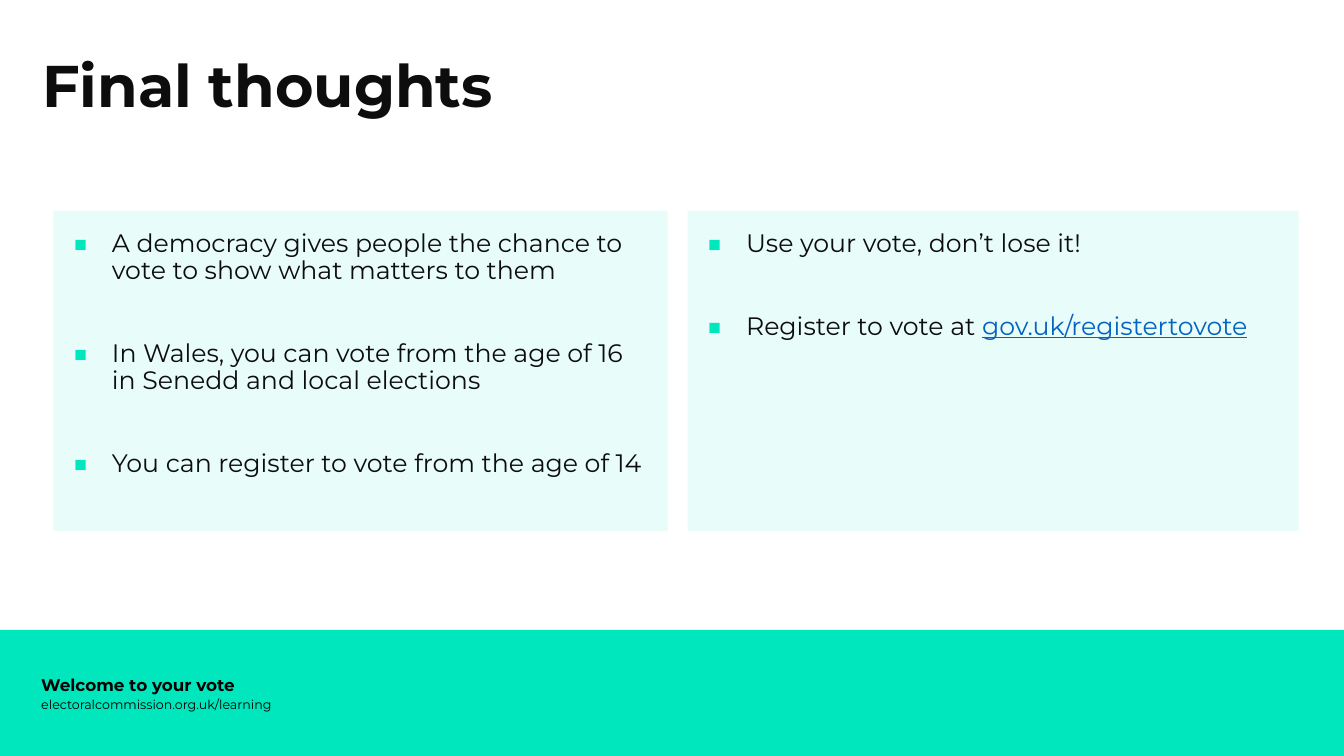
import pptx
import pptx.dml.color
import pptx.enum.shapes
import pptx.enum.text
import pptx.util
from dataclasses import dataclass
from lxml import etree
from pptx.oxml.ns import qn


@dataclass(frozen=True)
class Theme:
    font: str = "Montserrat"
    accent: str = "00E7BD"
    ink: str = "0D0D0D"
    black: str = "000000"
    link: str = "0563C1"
    title_size: int = 42
    body_size: int = 18
    footer_size: int = 12
    address_size: int = 9
    panel_opacity: int = 9
    bullet_scale: int = 140
    bullet_indent: float = 0.38
    panel_inset: float = 0.2
    line_spacing: float = 0.9
    bullet_gap: float = 39.5


THEME = Theme()
TITLE = "Final thoughts"
FOOTER = "Welcome to your vote"
ADDRESS = "electoralcommission.org.uk/learning"
PANELS = [
    {
        "left": 3.98,
        "width": 45.69,
        "bullets": [
            ["A democracy gives people the chance to vote to show what matters to them"],
            ["In Wales, you can vote from the age of 16 in Senedd and local elections"],
            ["You can register to vote from the age of 14"],
        ],
    },
    {
        "left": 51.16,
        "width": 45.46,
        "bullets": [
            ["Use your vote, don’t lose it!"],
            ["Register to vote at ", "gov.uk/registertovote"],
        ],
    },
]
LINKS = {"gov.uk/registertovote"}
PANEL_TOP, PANEL_HEIGHT = 27.87, 42.4
BAND_TOP = 83.33
TITLE_AREA = (2.4, 6.8, 63.09, 16)
FOOTER_LEFT, FOOTER_WIDTH, FOOTER_HEIGHT = 2.33, 57.39, 5.33
FOOTER_TOP, ADDRESS_TOP = 87.87, 90.53

deck = pptx.Presentation()
deck.slide_width = pptx.util.Inches(13.33)
deck.slide_height = pptx.util.Inches(7.5)
page = deck.slides.add_slide(deck.slide_layouts[6])


def place(left, top, width, height):
    across, down = deck.slide_width / 100, deck.slide_height / 100
    return [round(n) for n in (left * across, top * down, width * across, height * down)]


def rgb(value):
    return pptx.dml.color.RGBColor.from_string(value)


def add_span(para, text, size, color, bold=False, underline=False):
    span = para.add_run()
    span.text = text
    span.font.name = THEME.font
    span.font.size = pptx.util.Pt(size)
    span.font.color.rgb = rgb(color)
    span.font.bold = bold
    span.font.underline = underline


def add_block(area, opacity=100):
    box = page.shapes.add_shape(pptx.enum.shapes.MSO_SHAPE.RECTANGLE, *place(*area))
    box.shadow.inherit = False
    box.line.fill.background()
    box.fill.solid()
    box.fill.fore_color.rgb = rgb(THEME.accent)
    if opacity < 100:
        color = box.fill._xPr.find(qn("a:solidFill"))[0]
        etree.SubElement(color, qn("a:alpha"), val=str(opacity * 1000))
    return box


def add_label(area, text, size, color, anchor, bold=False, spacing=1.0):
    frame = page.shapes.add_textbox(*place(*area)).text_frame
    frame.word_wrap = True
    frame.vertical_anchor = anchor
    para = frame.paragraphs[0]
    para.line_spacing = spacing
    add_span(para, text, size, color, bold)


def add_bullet(para):
    settings = para._p.get_or_add_pPr()
    indent = pptx.util.Inches(THEME.bullet_indent)
    settings.set("marL", str(indent))
    settings.set("indent", str(-indent))
    color = etree.SubElement(settings, qn("a:buClr"))
    etree.SubElement(color, qn("a:srgbClr"), val=THEME.accent)
    etree.SubElement(settings, qn("a:buSzPct"), val=str(THEME.bullet_scale * 1000))
    etree.SubElement(settings, qn("a:buFont"), typeface=THEME.font)
    etree.SubElement(settings, qn("a:buChar"), char="▪")


def add_panel(panel):
    area = (panel["left"], PANEL_TOP, panel["width"], PANEL_HEIGHT)
    frame = add_block(area, THEME.panel_opacity).text_frame
    frame.word_wrap = True
    frame.vertical_anchor = pptx.enum.text.MSO_ANCHOR.TOP
    inset = pptx.util.Inches(THEME.panel_inset)
    frame.margin_left = frame.margin_right = inset
    frame.margin_top = frame.margin_bottom = inset
    for index, bullet in enumerate(panel["bullets"]):
        para = frame.add_paragraph() if index else frame.paragraphs[0]
        add_bullet(para)
        para.alignment = pptx.enum.text.PP_ALIGN.LEFT
        para.line_spacing = THEME.line_spacing
        if index:
            para.space_before = pptx.util.Pt(THEME.bullet_gap)
        for text in bullet:
            linked = text in LINKS
            color = THEME.link if linked else THEME.ink
            add_span(para, text, THEME.body_size, color, underline=linked)


def main():
    top, middle = pptx.enum.text.MSO_ANCHOR.TOP, pptx.enum.text.MSO_ANCHOR.MIDDLE
    add_block((0, BAND_TOP, 100, 100 - BAND_TOP))
    add_label((FOOTER_LEFT, ADDRESS_TOP, FOOTER_WIDTH, FOOTER_HEIGHT),
              ADDRESS, THEME.address_size, THEME.black, middle)
    add_label(TITLE_AREA, TITLE, THEME.title_size, THEME.ink, top, True, THEME.line_spacing)
    for panel in PANELS:
        add_panel(panel)
    add_label((FOOTER_LEFT, FOOTER_TOP, FOOTER_WIDTH, FOOTER_HEIGHT),
              FOOTER, THEME.footer_size, THEME.black, middle, True)
    deck.save("out.pptx")


if __name__ == "__main__":
    main()
